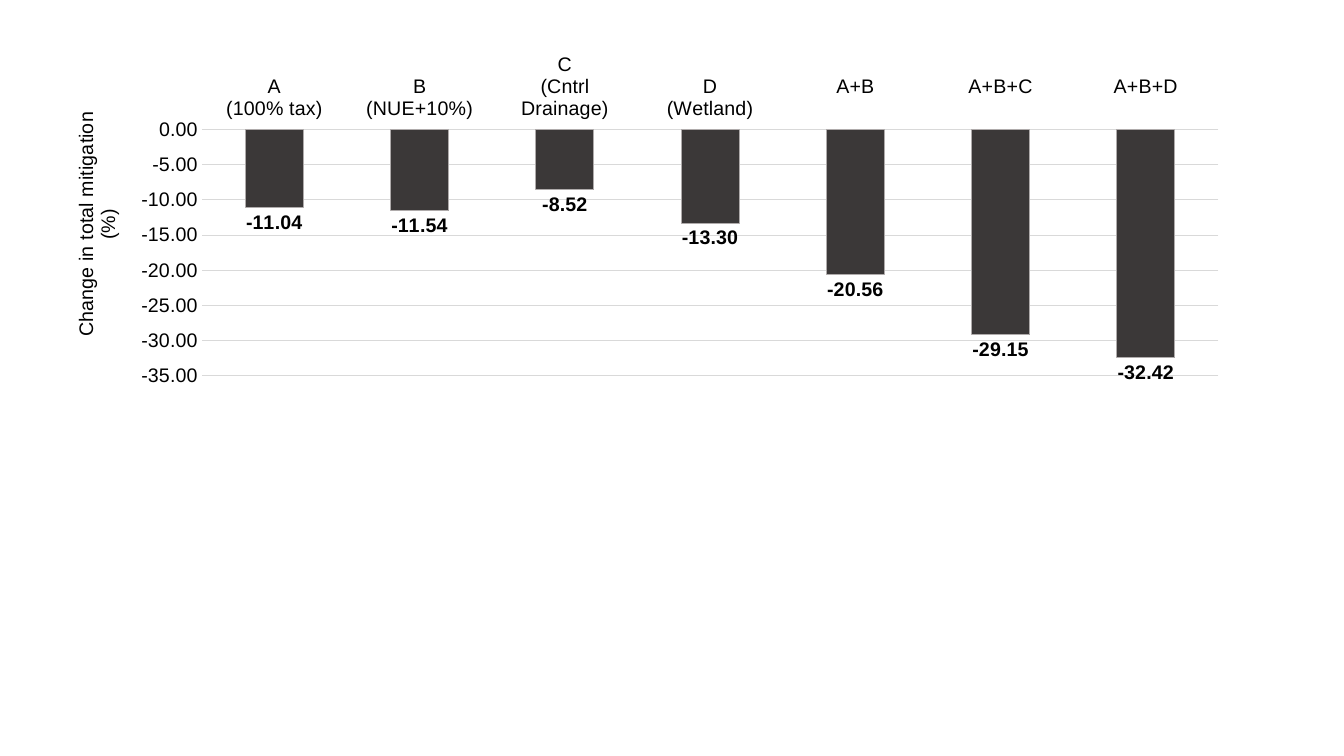
from lxml.etree import SubElement
from pptx import Presentation
from pptx.chart.data import CategoryChartData
from pptx.dml.color import RGBColor
from pptx.enum.chart import XL_CHART_TYPE, XL_LABEL_POSITION, XL_TICK_LABEL_POSITION, XL_TICK_MARK
from pptx.enum.text import PP_ALIGN
from pptx.oxml.ns import qn
from pptx.util import Inches, Pt

MITIGATION = {
    "A\n(100% tax)": -11.04,
    "B\n(NUE+10%)": -11.54,
    "C\n(Cntrl Drainage)": -8.52,
    "D\n(Wetland)": -13.30,
    "A+B\n": -20.56,
    "A+B+C\n": -29.15,
    "A+B+D\n": -32.42,
}


def rgb(value):
    return RGBColor.from_string(value)


def style_font(font, size=14, color="000000", bold=False, name="Arial"):
    font.name = name
    font.size = Pt(size)
    font.bold = bold
    font.color.rgb = rgb(color)


def write_text(tf, text, align=PP_ALIGN.CENTER, **fmt):
    for i, line in enumerate(text.split("\n")):
        p = tf.paragraphs[0] if i == 0 else tf.add_paragraph()
        p.alignment = align
        r = p.add_run()
        r.text = line
        style_font(r.font, **fmt)


def style_line(line, color, width=0.75):
    line.color.rgb = rgb(color)
    line.width = Pt(width)


def place(layout, **shares):
    for child in list(layout):
        layout.remove(child)
    manual = SubElement(layout, qn("c:manualLayout"))
    if "w" in shares:
        SubElement(manual, qn("c:layoutTarget")).set("val", "inner")
    for key in ("x", "y"):
        SubElement(manual, qn(f"c:{key}Mode")).set("val", "edge")
    for key, share in shares.items():
        SubElement(manual, qn(f"c:{key}")).set("val", str(share))


class Deck:
    grid = "D9D9D9"
    bar = "3B3838"
    outline = "AFABAB"

    def __init__(self, width=13.33, height=7.5):
        self.prs = Presentation()
        self.prs.slide_width = Inches(width)
        self.prs.slide_height = Inches(height)
        self.s = self.prs.slides.add_slide(self.prs.slide_layouts[6])

    def box(self, x, y, w, h):
        width, height = self.prs.slide_width, self.prs.slide_height
        return int(x * width), int(y * height), int(w * width), int(h * height)

    def column_chart(self, values, title, x, y, w, h):
        data = CategoryChartData(number_format="0.00")
        data.categories = list(values)
        data.add_series("Series 1", list(values.values()))
        chart = self.s.shapes.add_chart(
            XL_CHART_TYPE.COLUMN_CLUSTERED, *self.box(x, y, w, h), data).chart
        chart.has_legend = chart.has_title = False
        style_font(chart.font)
        self.bars(chart.plots[0])
        self.axes(chart, title)
        plot_area = chart.plots[0]._element.getparent()
        layout = plot_area.find(qn("c:layout"))
        if layout is None:
            layout = SubElement(plot_area, qn("c:layout"))
            plot_area.insert(0, layout)
        place(layout, x=0.13, y=0.24, w=0.85, h=0.71)

    def bars(self, plot):
        plot.gap_width = 150
        plot.vary_by_categories = False
        series = plot.series[0]
        series.invert_if_negative = False
        series.format.fill.solid()
        series.format.fill.fore_color.rgb = rgb(self.bar)
        style_line(series.format.line, self.outline)
        labels = series.data_labels
        labels.show_value = True
        labels.number_format = "0.00"
        labels.number_format_is_linked = False
        labels.position = XL_LABEL_POSITION.OUTSIDE_END
        style_font(labels.font, bold=True)

    def axes(self, chart, title):
        cat, val = chart.category_axis, chart.value_axis
        for axis in (cat, val):
            axis.major_tick_mark = axis.minor_tick_mark = XL_TICK_MARK.NONE
            style_font(axis.tick_labels.font)
        cat.tick_label_position = XL_TICK_LABEL_POSITION.HIGH
        style_line(cat.format.line, self.grid)
        val.minimum_scale, val.maximum_scale, val.major_unit = -35, 0, 5
        val.tick_labels.number_format = "0.00"
        val.tick_labels.number_format_is_linked = False
        val.format.line.fill.background()
        val.has_major_gridlines = True
        style_line(val.major_gridlines.format.line, self.grid)
        write_text(val.axis_title.text_frame, title)
        body = val.axis_title.text_frame._txBody.find(qn("a:bodyPr"))
        body.set("rot", "-5400000")
        body.set("vert", "horz")
        place(val.axis_title._element.get_or_add_layout()
              if hasattr(val.axis_title._element, "get_or_add_layout")
              else val.axis_title._element.find(qn("c:layout")), x=0.02, y=0.18)


def main():
    deck = Deck()
    deck.column_chart(MITIGATION, "Change in total mitigation\n(%)",
                      x=0.0345, y=0.0613, w=0.89, h=0.459)
    deck.prs.save("out.pptx")


if __name__ == "__main__":
    main()
